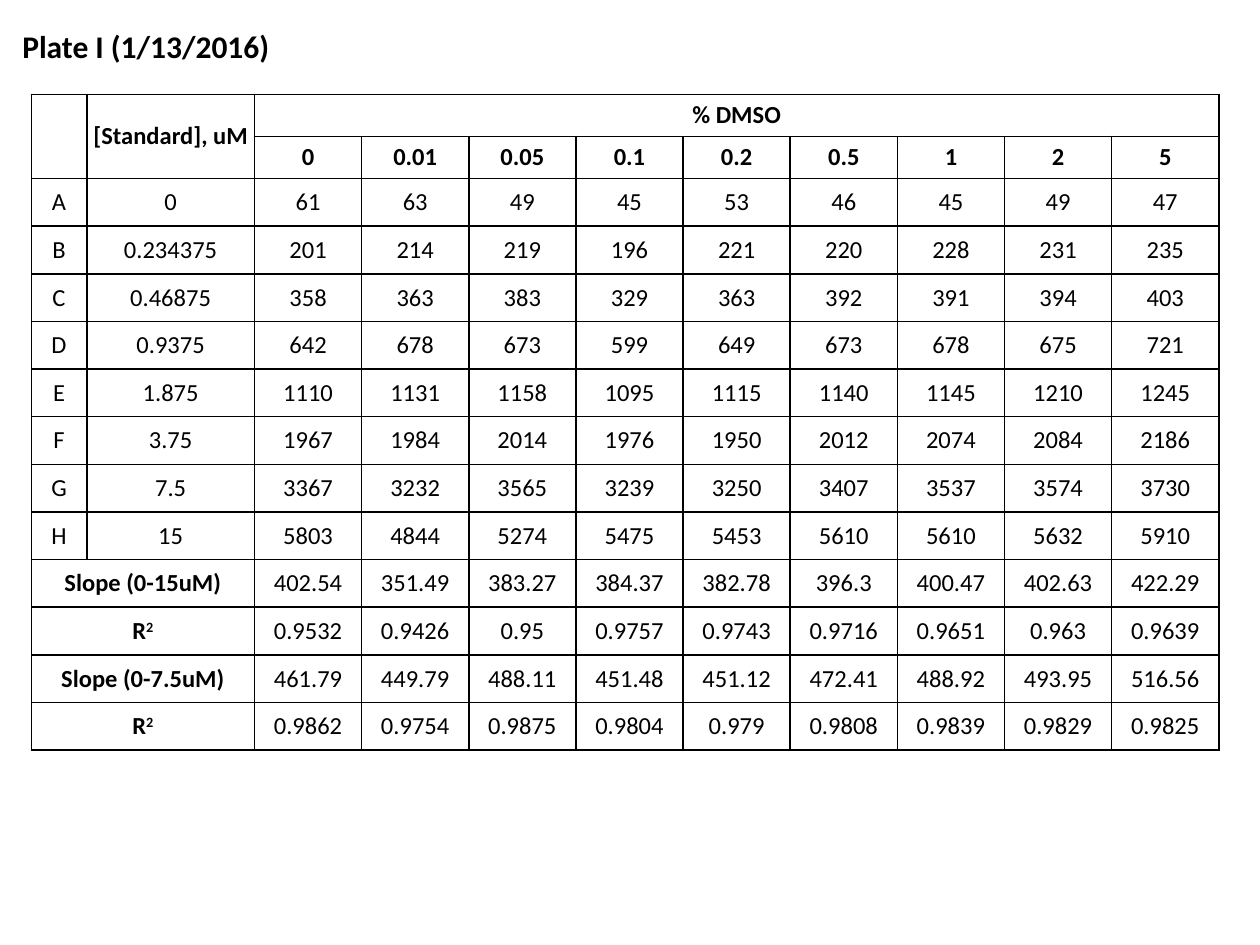
import pptx
import pptx.util
import pptx.dml.color
import pptx.enum.text
import pptx.oxml
import pptx.oxml.ns

Cm = pptx.util.Cm
Pt = pptx.util.Pt

COLORS = {"ink": "000000"}
FACE = "Calibri"
DOSES = "0 0.01 0.05 0.1 0.2 0.5 1 2 5"
WELLS = [
    "A 0 61 63 49 45 53 46 45 49 47",
    "B 0.234375 201 214 219 196 221 220 228 231 235",
    "C 0.46875 358 363 383 329 363 392 391 394 403",
    "D 0.9375 642 678 673 599 649 673 678 675 721",
    "E 1.875 1110 1131 1158 1095 1115 1140 1145 1210 1245",
    "F 3.75 1967 1984 2014 1976 1950 2012 2074 2084 2186",
    "G 7.5 3367 3232 3565 3239 3250 3407 3537 3574 3730",
    "H 15 5803 4844 5274 5475 5453 5610 5610 5632 5910",
]
FITS = [
    ("Slope (0-15uM)", "", "402.54 351.49 383.27 384.37 382.78 396.3 400.47 402.63 422.29"),
    ("R", "2", "0.9532 0.9426 0.95 0.9757 0.9743 0.9716 0.9651 0.963 0.9639"),
    ("Slope (0-7.5uM)", "", "461.79 449.79 488.11 451.48 451.12 472.41 488.92 493.95 516.56"),
    ("R", "2", "0.9862 0.9754 0.9875 0.9804 0.979 0.9808 0.9839 0.9829 0.9825"),
]
WIDTHS = [1.12, 3.38] + [2.16] * 9
HEIGHTS = [0.85] * 2 + [0.96] * (len(WELLS) + len(FITS))


def set_font(para, size, bold):
    font = para.font
    font.name = FACE
    font.size = Pt(size)
    font.bold = bold
    font.color.rgb = pptx.dml.color.RGBColor.from_string(COLORS["ink"])


def add_title(slide, text):
    box = slide.shapes.add_textbox(Cm(0.2), Cm(0.43), Cm(5.54), Cm(1.02))
    frame = box.text_frame
    frame.word_wrap = False
    frame.auto_size = pptx.enum.text.MSO_AUTO_SIZE.SHAPE_TO_FIT_TEXT
    para = frame.paragraphs[0]
    para.add_run().text = text
    set_font(para, 18, True)


def add_border(cell):
    props = cell._tc.get_or_add_tcPr()
    for spot, side in enumerate(("lnL", "lnR", "lnT", "lnB")):
        line = pptx.oxml.parse_xml(
            f'<a:{side} {pptx.oxml.ns.nsdecls("a")} w="{Pt(1)}"><a:solidFill>'
            f'<a:srgbClr val="{COLORS["ink"]}"/></a:solidFill></a:{side}>'
        )
        props.insert(spot, line)


def style_cell(cell):
    cell.fill.background()
    cell.margin_left = cell.margin_right = 0
    cell.margin_top = cell.margin_bottom = 0
    cell.vertical_anchor = pptx.enum.text.MSO_ANCHOR.MIDDLE
    add_border(cell)


def write_cell(cell, text, bold=False, power=""):
    para = cell.text_frame.paragraphs[0]
    para.alignment = pptx.enum.text.PP_ALIGN.CENTER
    para.add_run().text = text
    if power:
        run = para.add_run()
        run.text = power
        run._r.get_or_add_rPr().set("baseline", "30000")
    set_font(para, 14, bold)


def write_row(table, row, first, values, bold=False):
    for col, value in enumerate(values.split(), first):
        write_cell(table.cell(row, col), value, bold)


def add_grid(slide):
    frame = slide.shapes.add_table(
        len(HEIGHTS), len(WIDTHS), Cm(0.63), Cm(1.9), Cm(sum(WIDTHS)), Cm(sum(HEIGHTS))
    )
    table = frame.table
    table.first_row = table.horz_banding = False
    for col, width in zip(table.columns, WIDTHS):
        col.width = Cm(width)
    for row, height in zip(table.rows, HEIGHTS):
        row.height = Cm(height)
    for cell in table.iter_cells():
        style_cell(cell)
    return table


def fill_head(table):
    for col in (0, 1):
        table.cell(0, col).merge(table.cell(1, col))
    table.cell(0, 2).merge(table.cell(0, len(WIDTHS) - 1))
    write_cell(table.cell(0, 1), "[Standard], uM", True)
    write_cell(table.cell(0, 2), "% DMSO", True)
    write_row(table, 1, 2, DOSES, True)


def fill_body(table):
    for row, well in enumerate(WELLS, 2):
        write_row(table, row, 0, well)
    for row, (label, power, values) in enumerate(FITS, 2 + len(WELLS)):
        table.cell(row, 0).merge(table.cell(row, 1))
        write_cell(table.cell(row, 0), label, True, power)
        write_row(table, row, 2, values)


def main():
    deck = pptx.Presentation()
    deck.slide_width = Cm(25.4)
    deck.slide_height = Cm(19.05)
    slide = deck.slides.add_slide(deck.slide_layouts[6])
    table = add_grid(slide)
    fill_head(table)
    fill_body(table)
    add_title(slide, "Plate I (1/13/2016)")
    deck.save("out.pptx")


if __name__ == "__main__":
    main()
